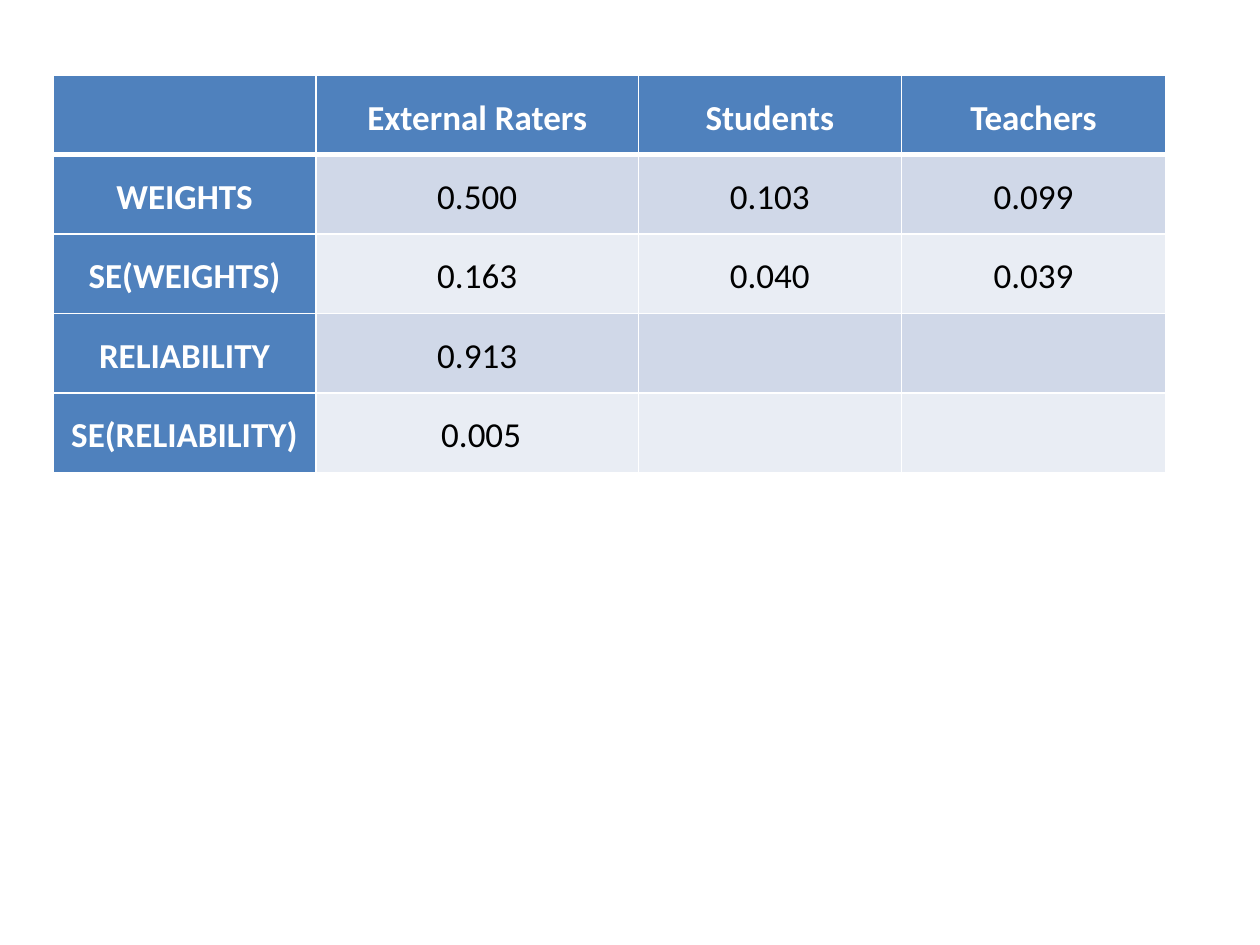
from dataclasses import dataclass
from lxml.etree import SubElement as Sub
from pptx import Presentation
from pptx.dml.color import RGBColor as Rgb
from pptx.enum.text import PP_ALIGN as Align
from pptx.oxml.ns import qn
from pptx.util import Cm, Pt


@dataclass(frozen=True)
class Theme:
    font: str = "Calibri"
    size: int = 20
    head: str = "4F81BD"
    bands: tuple = ("D0D8E8", "E9EDF4")
    light: str = "FFFFFF"
    dark: str = "000000"
    thin: int = 1
    thick: int = 3


class Deck:
    def __init__(self, theme):
        self.theme = theme
        self.prs = Presentation()
        self.prs.slide_width, self.prs.slide_height = Cm(25.4), Cm(19.05)
        self.slide = self.prs.slides.add_slide(self.prs.slide_layouts[6])

    def table(self, left, top, widths, height, rows):
        """Add a table with a header row, a header column and banded rows."""
        frame = self.slide.shapes.add_table(
            len(rows), len(widths), Cm(left), Cm(top),
            Cm(sum(widths)), Cm(height * len(rows)))
        grid = frame.table
        for col, width in zip(grid.columns, widths):
            col.width = Cm(width)
        for r, row in enumerate(rows):
            grid.rows[r].height = Cm(height)
            for c, text in enumerate(row):
                self.cell(grid.cell(r, c), text, r, c)

    def cell(self, cell, text, r, c):
        look = self.theme
        head = r == 0 or c == 0
        self.edges(cell, r)
        cell.fill.solid()
        fill = look.head if head else look.bands[(r - 1) % 2]
        cell.fill.fore_color.rgb = Rgb.from_string(fill)
        cell.margin_left = cell.margin_right = Cm(0.18)
        cell.margin_top = cell.margin_bottom = 0
        cell.text_frame.text = text
        para = cell.text_frame.paragraphs[0]
        para.alignment = Align.CENTER
        para.line_spacing = 1.5
        for run in para.runs:
            run.font.name = look.font
            run.font.size = Pt(look.size)
            run.font.bold = head
            ink = look.light if head else look.dark
            run.font.color.rgb = Rgb.from_string(ink)

    def edges(self, cell, r):
        """Draw the cell borders, thick between the header and the body."""
        look = self.theme
        props = cell._tc.get_or_add_tcPr()
        for side in "LRTB":
            wide = (r, side) in ((0, "B"), (1, "T"))
            width = Pt(look.thick if wide else look.thin)
            line = Sub(props, qn(f"a:ln{side}"), w=str(width))
            Sub(Sub(line, qn("a:solidFill")), qn("a:srgbClr"), val=look.light)


def main():
    deck = Deck(Theme())
    deck.table(1.07, 1.52, [5.3, 6.5, 5.3, 5.33], 1.6, [
        ["", "External Raters", "Students", "Teachers"],
        ["WEIGHTS", "0.500", "0.103", "0.099"],
        ["SE(WEIGHTS)", "0.163", "0.040", "0.039"],
        ["RELIABILITY", "0.913", "", ""],
        ["SE(RELIABILITY)", " 0.005", "", ""],
    ])
    deck.prs.save("out.pptx")


if __name__ == "__main__":
    main()
